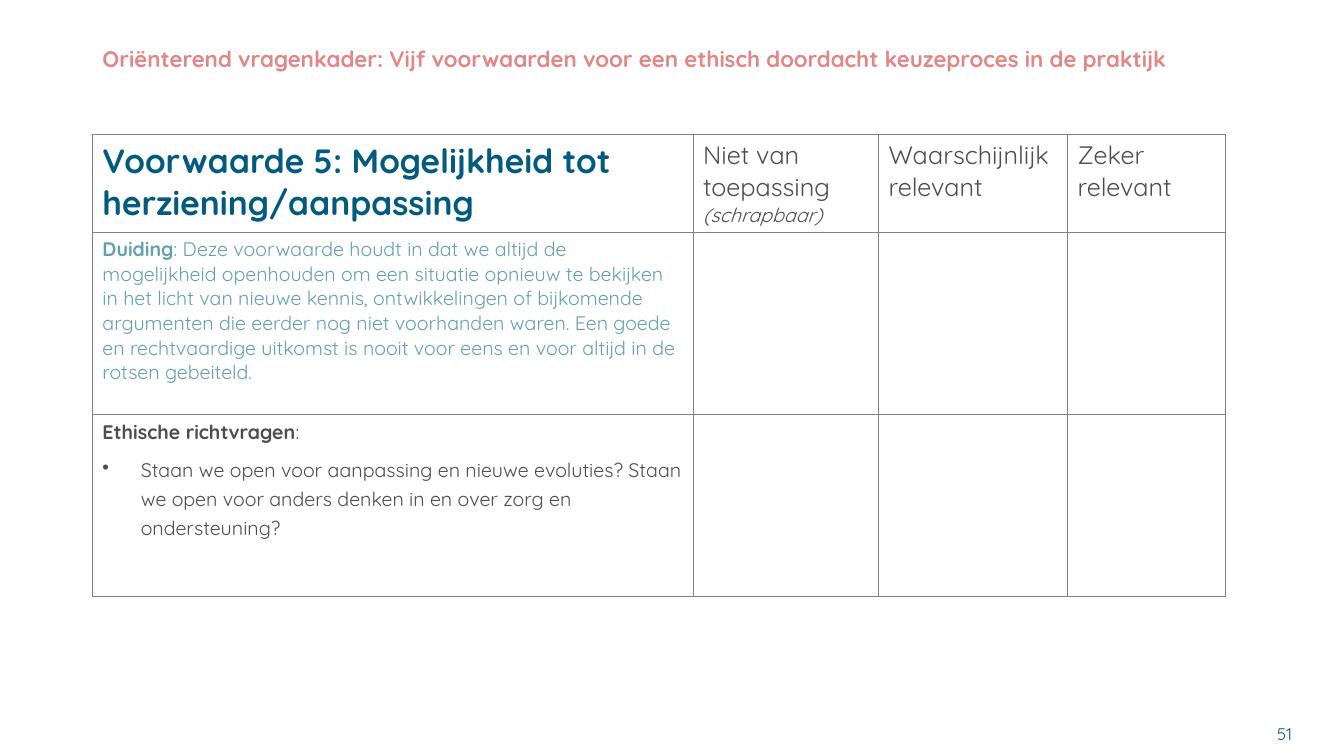
from lxml.etree import SubElement
from pptx import Presentation
from pptx.dml.color import RGBColor
from pptx.enum.text import MSO_ANCHOR as Anchor, MSO_AUTO_SIZE as AutoSize, PP_ALIGN as Align
from pptx.oxml.ns import qn
from pptx.util import Inches, Pt

COLORS = {"title": "E28686", "heading": "005B7F", "note": "65A0B2",
          "text": "4D4D4D", "border": "808080"}
CELL = 1 / 12  # inches per grid unit: 160 columns by 90 rows


def grid(units):
    return Inches(units * CELL)


class SlideBuilder:
    font_name = "Quicksand"

    def __init__(self, presentation):
        self.slide = presentation.slides.add_slide(presentation.slide_layouts[5])

    def style(self, font, size, color, bold=False, italic=False):
        font.name, font.size = self.font_name, Pt(size)
        font.bold, font.italic = bold, italic
        font.color.rgb = RGBColor.from_string(COLORS[color])

    def place(self, shape, left, top, width, height):
        shape.left, shape.top = grid(left), grid(top)
        shape.width, shape.height = grid(width), grid(height)
        frame = shape.text_frame
        frame.word_wrap, frame.auto_size = True, AutoSize.NONE
        frame.vertical_anchor = Anchor.MIDDLE

    def title(self, text, *box):
        shape = self.slide.shapes.title
        self.place(shape, *box)
        shape.text_frame.text = text
        paragraph = shape.text_frame.paragraphs[0]
        paragraph.alignment, paragraph.line_spacing = Align.LEFT, 0.9
        self.style(paragraph.font, 16, "title", bold=True)

    def page_number(self, number, *box):
        shape = self.slide.shapes.add_textbox(0, 0, 0, 0)
        self.place(shape, *box)
        shape.text_frame.text = str(number)
        paragraph = shape.text_frame.paragraphs[0]
        paragraph.alignment = Align.RIGHT
        self.style(paragraph.font, 12, "heading")

    def table(self, left, top, columns, rows):
        frame = self.slide.shapes.add_table(
            len(rows), len(columns), grid(left), grid(top),
            grid(sum(columns)), grid(sum(rows)))
        table = frame.table
        table.first_row = table.horz_banding = False
        for column, width in zip(table.columns, columns):
            column.width = grid(width)
        for row, height in zip(table.rows, rows):
            row.height = grid(height)
        for cell in table.iter_cells():
            self.border(cell)
            cell.fill.background()
        return table

    def border(self, cell):
        properties = cell._tc.get_or_add_tcPr()
        for side in ("a:lnL", "a:lnR", "a:lnT", "a:lnB"):
            line = SubElement(properties, qn(side), w=str(Pt(0.5)))
            fill = SubElement(line, qn("a:solidFill"))
            SubElement(fill, qn("a:srgbClr"), val=COLORS["border"])

    def cell_text(self, cell, text, size, color, label="", **font_style):
        """Add a paragraph to a cell, with an optional bold label in front."""
        frame = cell.text_frame
        paragraph = frame.add_paragraph() if frame.text else frame.paragraphs[0]
        if label:
            run = paragraph.add_run()
            run.text = label
            self.style(run.font, size, color, bold=True)
        paragraph.add_run().text = text
        self.style(paragraph.font, size, color, **font_style)
        return paragraph

    def bullet(self, cell, text, size, color):
        paragraph = self.cell_text(cell, text, size, color)
        paragraph.line_spacing, paragraph.space_before = 1.2, Pt(6)
        properties = paragraph._p.get_or_add_pPr()
        indent = Inches(0.38)
        properties.set("marL", str(indent))
        properties.set("indent", str(-indent))
        character = properties.makeelement(qn("a:buChar"), {"char": "•"})
        properties.find(qn("a:defRPr")).addprevious(character)


def main():
    presentation = Presentation()
    presentation.slide_width, presentation.slide_height = grid(160), grid(90)
    builder = SlideBuilder(presentation)

    # Title and page number
    builder.title("Oriënterend vragenkader: Vijf voorwaarden voor een ethisch "
                  "doordacht keuzeproces in de praktijk", 11, 4.8, 134.9, 4.8)
    builder.page_number(51, 119, 85, 36, 4.8)

    # Assessment table
    table = builder.table(11, 16, [71.5, 22.1, 22.5, 18.8], [11.6, 21.7, 21.7])

    # Header row
    builder.cell_text(table.cell(0, 0), "Voorwaarde 5: Mogelijkheid tot herziening/aanpassing",
                      24, "heading", bold=True)
    answers = ["Niet van toepassing", "Waarschijnlijk relevant", "Zeker relevant"]
    for column, answer in enumerate(answers, start=1):
        builder.cell_text(table.cell(0, column), answer, 18, "text")
    builder.cell_text(table.cell(0, 1), "(schrapbaar)", 14, "text", italic=True)

    # Explanation and guiding questions
    builder.cell_text(
        table.cell(1, 0),
        ": Deze voorwaarde houdt in dat we altijd de mogelijkheid openhouden om een "
        "situatie opnieuw te bekijken in het licht van nieuwe kennis, ontwikkelingen of "
        "bijkomende argumenten die eerder nog niet voorhanden waren. Een goede en "
        "rechtvaardige uitkomst is nooit voor eens en voor altijd in de rotsen gebeiteld.",
        14, "note", label="Duiding")
    questions = table.cell(2, 0)
    builder.cell_text(questions, ":", 14, "text", label="Ethische richtvragen")
    builder.bullet(
        questions,
        "Staan we open voor aanpassing en nieuwe evoluties? Staan we open voor "
        "anders denken in en over zorg en ondersteuning?", 14, "text")

    presentation.save("out.pptx")


if __name__ == "__main__":
    main()
